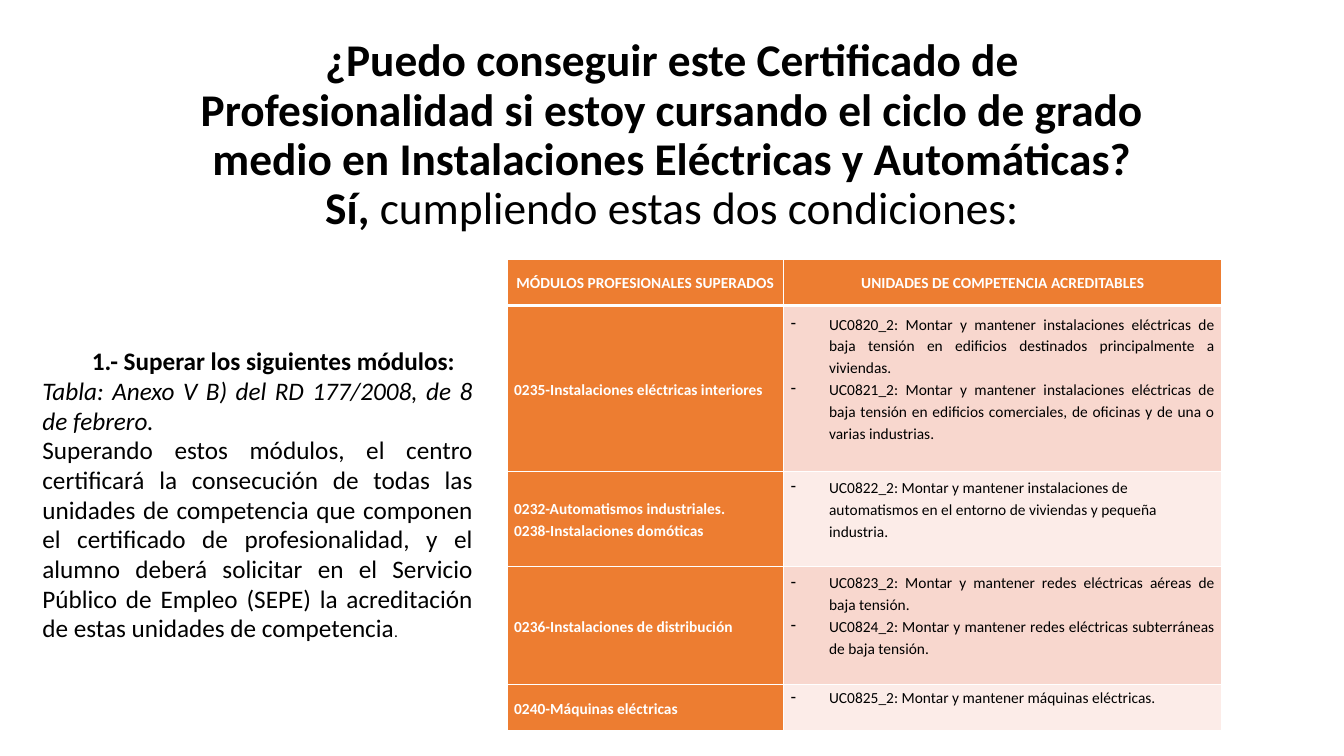
import pptx
import pptx.util
import pptx.dml.color
import pptx.enum.text
from lxml import etree
from pptx.oxml.ns import qn

WIDTH, HEIGHT = 13.33, 7.5
FONT = "Calibri"
BLACK, WHITE, ORANGE = "000000", "FFFFFF", "ED7D31"
BANDS = ["F8D7CE", "FCECE8"]
ALIGN = pptx.enum.text.PP_ALIGN
ANCHOR = pptx.enum.text.MSO_ANCHOR
LINE = 0.21

TITLE = [
    ("¿Puedo conseguir este Certificado de Profesionalidad si estoy cursando "
     "el ciclo de grado medio en Instalaciones Eléctricas y Automáticas?", True),
    None,
    ("Sí,", True),
    (" cumpliendo estas dos condiciones:", False),
]
HEADERS = ["MÓDULOS PROFESIONALES SUPERADOS", "UNIDADES DE COMPETENCIA ACREDITABLES"]
ROWS = [
    (1.65, ["0235-Instalaciones eléctricas interiores"], ALIGN.JUSTIFY, [
        "UC0820_2: Montar y mantener instalaciones eléctricas de baja tensión en "
        "edificios destinados principalmente a viviendas.",
        "UC0821_2: Montar y mantener instalaciones eléctricas de baja tensión en "
        "edificios comerciales, de oficinas y de una o varias industrias."]),
    (0.94, ["0232-Automatismos industriales.", "0238-Instalaciones domóticas"], ALIGN.LEFT, [
        "UC0822_2: Montar y mantener instalaciones de automatismos en el entorno "
        "de viviendas y pequeña industria."]),
    (1.17, ["0236-Instalaciones de distribución"], ALIGN.JUSTIFY, [
        "UC0823_2: Montar y mantener redes eléctricas aéreas de baja tensión.",
        "UC0824_2: Montar y mantener redes eléctricas subterráneas de baja tensión."]),
    (0.46, ["0240-Máquinas eléctricas"], ALIGN.JUSTIFY, [
        "UC0825_2: Montar y mantener máquinas eléctricas."]),
]


def inches(value):
    """Return a length in inches."""
    return pptx.util.Inches(value)


def rgb(color):
    """Return a colour from its hex string."""
    return pptx.dml.color.RGBColor.from_string(color)


def add_run(p, text, size, color=BLACK, bold=False, italic=False):
    """Add one formatted run to a paragraph."""
    r = p.add_run()
    r.text = text
    r.font.name, r.font.size = FONT, pptx.util.Pt(size)
    r.font.bold, r.font.italic = bold, italic
    r.font.color.rgb = rgb(color)


def add_paragraph(tf, index, align, spacing):
    """Return the paragraph at an index, adding it after the first."""
    p = tf.add_paragraph() if index else tf.paragraphs[0]
    p.alignment, p.line_spacing = align, spacing
    p.space_before = pptx.util.Pt(0)
    return p


def place(sp, box, anchor):
    """Move a placeholder to a box and return its text frame."""
    sp.left, sp.top, sp.width, sp.height = map(inches, box)
    tf = sp.text_frame
    tf.word_wrap = True
    tf.auto_size = pptx.enum.text.MSO_AUTO_SIZE.NONE
    tf.vertical_anchor = anchor
    return tf


def fill_title(sp, box):
    """Write the question and its answer in the title."""
    tf = place(sp, box, ANCHOR.BOTTOM)
    tf.margin_bottom = inches(0.93)
    p = add_paragraph(tf, 0, ALIGN.CENTER, 0.9)
    for part in TITLE:
        if part is None:
            p.add_line_break()
        else:
            add_run(p, part[0], 32.4, bold=part[1])


def fill_condition(sp, box):
    """Write the first condition in the subtitle."""
    tf = place(sp, box, ANCHOR.MIDDLE)
    heading, source, detail = [add_paragraph(tf, i, ALIGN.JUSTIFY, 0.98) for i in range(3)]
    heading._p.get_or_add_pPr().set("indent", str(inches(0.49)))
    add_run(heading, "1.- Superar los siguientes módulos:", 18, bold=True)
    add_run(source, "Tabla: Anexo V B) del RD 177/2008, de 8 de febrero.", 18, italic=True)
    add_run(detail, "Superando estos módulos, el centro certificará la consecución de "
            "todas las unidades de competencia que componen el certificado de "
            "profesionalidad, y el alumno deberá solicitar en el Servicio Público de "
            "Empleo (SEPE) la acreditación de estas unidades de competencia", 18)
    add_run(detail, ".", 11)


def set_borders(cell, top, bottom):
    """Draw white borders around a cell."""
    tcPr = cell._tc.get_or_add_tcPr()
    for side, width in zip("LRTB", (1, 1, top, bottom)):
        ln = etree.SubElement(tcPr, qn(f"a:ln{side}"), w=str(pptx.util.Pt(width)))
        solid = etree.SubElement(ln, qn("a:solidFill"))
        etree.SubElement(solid, qn("a:srgbClr"), val=WHITE)


def add_dash(p):
    """Give a paragraph a hanging dash."""
    pPr = p._p.get_or_add_pPr()
    pPr.set("marL", str(inches(0.38)))
    pPr.set("indent", str(inches(-0.38)))
    etree.SubElement(pPr, qn("a:buFontTx"))
    etree.SubElement(pPr, qn("a:buChar"), char="-")


def fill_cell(cell, texts, fill, align, borders=(1, 1), dashed=False):
    """Write a table cell, with dashes for lists of units."""
    set_borders(cell, *borders)
    cell.fill.solid()
    cell.fill.fore_color.rgb = rgb(fill)
    cell.vertical_anchor = ANCHOR.MIDDLE
    cell.margin_left = cell.margin_right = inches(0.07)
    cell.margin_top = 0
    cell.margin_bottom = inches(LINE if dashed else 0)
    for i, text in enumerate(texts):
        p = add_paragraph(cell.text_frame, i, align, 1.15)
        if dashed:
            add_dash(p)
        add_run(p, text, 11, BLACK if dashed else WHITE, bold=not dashed)


def add_modules_table(s, box):
    """Add the table of modules and the units they accredit."""
    table = s.shapes.add_table(len(ROWS) + 1, 2, *map(inches, box)).table
    for column, share in zip(table.columns, (0.387, 0.613)):
        column.width = inches(box[2] * share)
    table.rows[0].height = inches(0.46)
    for col, header in enumerate(HEADERS):
        fill_cell(table.cell(0, col), [header], ORANGE, ALIGN.CENTER, (1, 3))
    for row, (height, modules, align, units) in enumerate(ROWS, 1):
        table.rows[row].height = inches(height)
        borders = (3 if row == 1 else 1, 1)
        fill_cell(table.cell(row, 0), modules, ORANGE, ALIGN.LEFT, borders)
        fill_cell(table.cell(row, 1), units, BANDS[(row - 1) % 2], align, borders, dashed=True)


def main():
    """Build the slide and save it."""
    prs = pptx.Presentation()
    prs.slide_width, prs.slide_height = inches(WIDTH), inches(HEIGHT)
    s = prs.slides.add_slide(prs.slide_layouts[0])
    fill_title(s.shapes.title, (WIDTH / 8, 1.23, WIDTH * 0.75, 2.02))
    add_modules_table(s, (5.03, 2.57, 7.09, 4.68))
    fill_condition(s.placeholders[1], (0.32, 3.35, 4.47, 3.13))
    prs.save("out.pptx")


if __name__ == "__main__":
    main()
